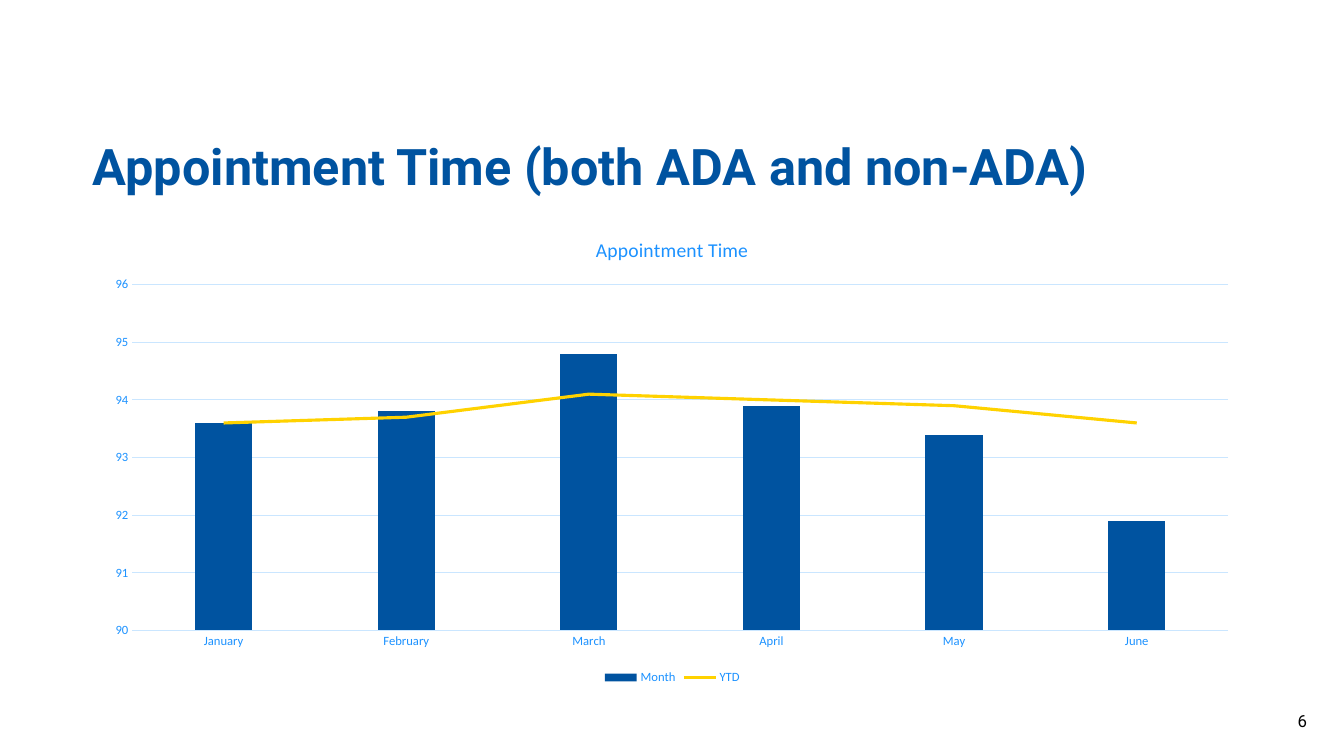
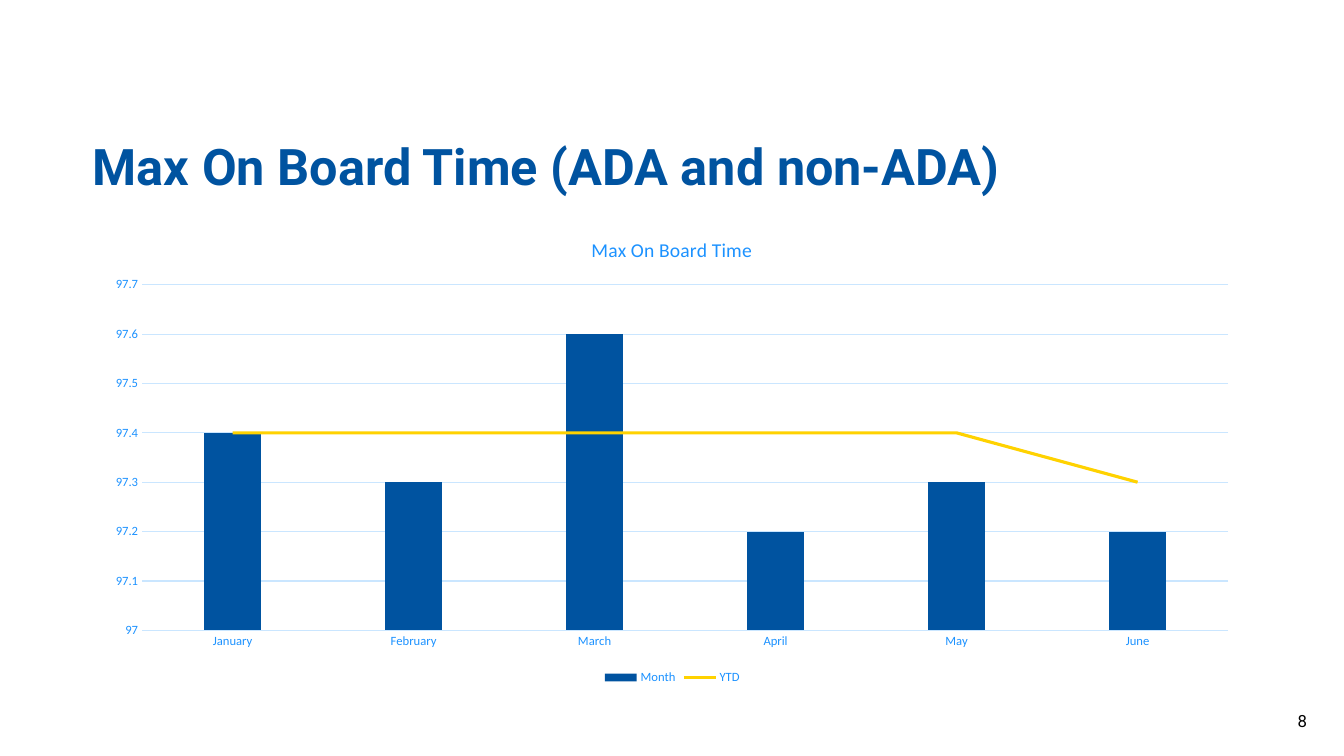
"""Build two slides that chart monthly and year-to-date service times."""
from lxml.etree import SubElement
from pptx import Presentation
from pptx.chart.data import CategoryChartData as ChartData
from pptx.dml.color import RGBColor
from pptx.enum.chart import XL_CHART_TYPE as Kind
from pptx.enum.chart import XL_LEGEND_POSITION as Side
from pptx.enum.chart import XL_MARKER_STYLE as Mark
from pptx.enum.chart import XL_TICK_MARK as Tick
from pptx.enum.text import MSO_ANCHOR as Anchor
from pptx.enum.text import PP_ALIGN as Align
from pptx.oxml import parse_xml
from pptx.oxml.ns import nsdecls, qn
from pptx.util import Cm, Pt

NAVY = RGBColor(0x00, 0x53, 0xA0)
BLUE = RGBColor(0x1C, 0x92, 0xFF)
PALE = RGBColor(0xCA, 0xE6, 0xFF)
GOLD = RGBColor(0xFF, 0xD2, 0x00)
BLACK = RGBColor(0, 0, 0)
LEFT, WIDTH = Cm(2.34), Cm(29.21)
MONTHS = ["January", "February", "March", "April", "May", "June"]

SLIDES = [
    dict(title="Appointment Time (both ADA and non-ADA)", page="6",
         name="Appointment Time", name_x=43.1, plot_x=3.4,
         low=90, high=96, step=1,
         month=[93.6, 93.8, 94.8, 93.9, 93.4, 91.9],
         ytd=[93.6, 93.7, 94.1, 94, 93.9, 93.6]),
    dict(title="Max On Board Time (ADA and non-ADA)", page="8",
         name="Max On Board Time", name_x=42.7, plot_x=4.25,
         low=97, high=97.7, step=0.1,
         month=[97.4, 97.3, 97.6, 97.2, 97.3, 97.2],
         ytd=[97.4, 97.4, 97.4, 97.4, 97.4, 97.3]),
]


def write(slide, text, box, size, color, bold=False, align=Align.LEFT,
          anchor=Anchor.MIDDLE, top=0.13, space=1.0):
    """Add a text box in the heading font."""
    frame = slide.shapes.add_textbox(*box).text_frame
    frame.word_wrap = True
    frame.vertical_anchor = anchor
    frame.margin_left = frame.margin_right = 0
    frame.margin_top, frame.margin_bottom = Cm(top), Cm(0.13)
    para = frame.paragraphs[0]
    para.text = text
    para.alignment, para.line_spacing = align, space
    font = para.font
    font.name, font.size, font.bold = "Roboto", Pt(size), bold
    font.color.rgb = color


def place(part, index, modes, **shares):
    """Give a chart part a fixed layout, in percent of the chart."""
    for old in part.findall(qn("c:layout")):
        part.remove(old)
    layout = parse_xml(f"<c:layout {nsdecls('c')}><c:manualLayout/></c:layout>")
    for tag, mode in modes.items():
        SubElement(layout[0], qn(f"c:{tag}")).set("val", mode)
    for tag, share in shares.items():
        SubElement(layout[0], qn(f"c:{tag}")).set("val", f"{share / 100:.4f}")
    part.insert(index, layout)


EDGES = dict(xMode="edge", yMode="edge")
deck = Presentation()
deck.slide_width, deck.slide_height = Cm(33.87), Cm(19.05)

for item in SLIDES:
    slide = deck.slides.add_slide(deck.slide_layouts[6])
    write(slide, item["title"], (LEFT, Cm(1.7), WIDTH, Cm(3.38)), 36, NAVY,
          bold=True, anchor=Anchor.BOTTOM, top=1.02, space=0.9)
    write(slide, item["page"], (Cm(28.88), Cm(17.65), Cm(4.06), Cm(1.02)),
          12, BLACK, align=Align.RIGHT)

    data = ChartData()
    data.categories = MONTHS
    data.add_series("Month", item["month"])
    data.add_series("YTD", item["ytd"])
    chart = slide.shapes.add_chart(
        Kind.COLUMN_CLUSTERED, LEFT, Cm(5.49), WIDTH, Cm(11.87), data).chart
    chart.font.name, chart.font.size = "Calibri", Pt(9)
    chart.font.color.rgb = BLUE

    chart.has_title = True
    para = chart.chart_title.text_frame.paragraphs[0]
    para.text = item["name"]
    para.font.name, para.font.size, para.font.bold = "Calibri", Pt(14), False
    para.font.color.rgb = BLUE
    place(chart.chart_title._element, 1, EDGES, x=item["name_x"], y=3.25)

    chart.has_legend = True
    chart.legend.position = Side.BOTTOM
    chart.legend.include_in_layout = False

    bars = chart.plots[0]
    bars.gap_width, bars.overlap = 219, -27
    bars.vary_by_categories = False
    fill = bars.series[0].format.fill
    fill.solid()
    fill.fore_color.rgb = NAVY

    group = bars._element
    line = parse_xml(
        f"<c:lineChart {nsdecls('c')}><c:grouping val='standard'/>"
        "<c:varyColors val='0'/><c:marker val='1'/></c:lineChart>")
    trend = group.findall(qn("c:ser"))[1]
    for flag in trend.findall(qn("c:invertIfNegative")):
        trend.remove(flag)
    line.insert(2, trend)
    for axis in group.findall(qn("c:axId")):
        SubElement(line, qn("c:axId")).set("val", axis.get("val"))
    group.addnext(line)
    ytd = chart.plots[1].series[0]
    ytd.smooth = False
    ytd.marker.style = Mark.NONE
    ytd.format.line.width = Pt(2.25)
    ytd.format.line.color.rgb = GOLD
    place(group.getparent(), 0, dict(layoutTarget="inner", **EDGES),
          x=item["plot_x"], y=14.2, w=97.95 - item["plot_x"], h=73.4)

    cats, vals = chart.category_axis, chart.value_axis
    for axis in (cats, vals):
        axis.major_tick_mark = axis.minor_tick_mark = Tick.NONE
    vals.minimum_scale, vals.maximum_scale = item["low"], item["high"]
    vals.major_unit = item["step"]
    vals.tick_labels.number_format = "General"
    vals.tick_labels.number_format_is_linked = False
    vals.format.line.fill.background()
    vals.has_major_gridlines = True
    for rule in (cats.format.line, vals.major_gridlines.format.line):
        rule.width = Pt(0.75)
        rule.color.rgb = PALE

deck.save("out.pptx")
